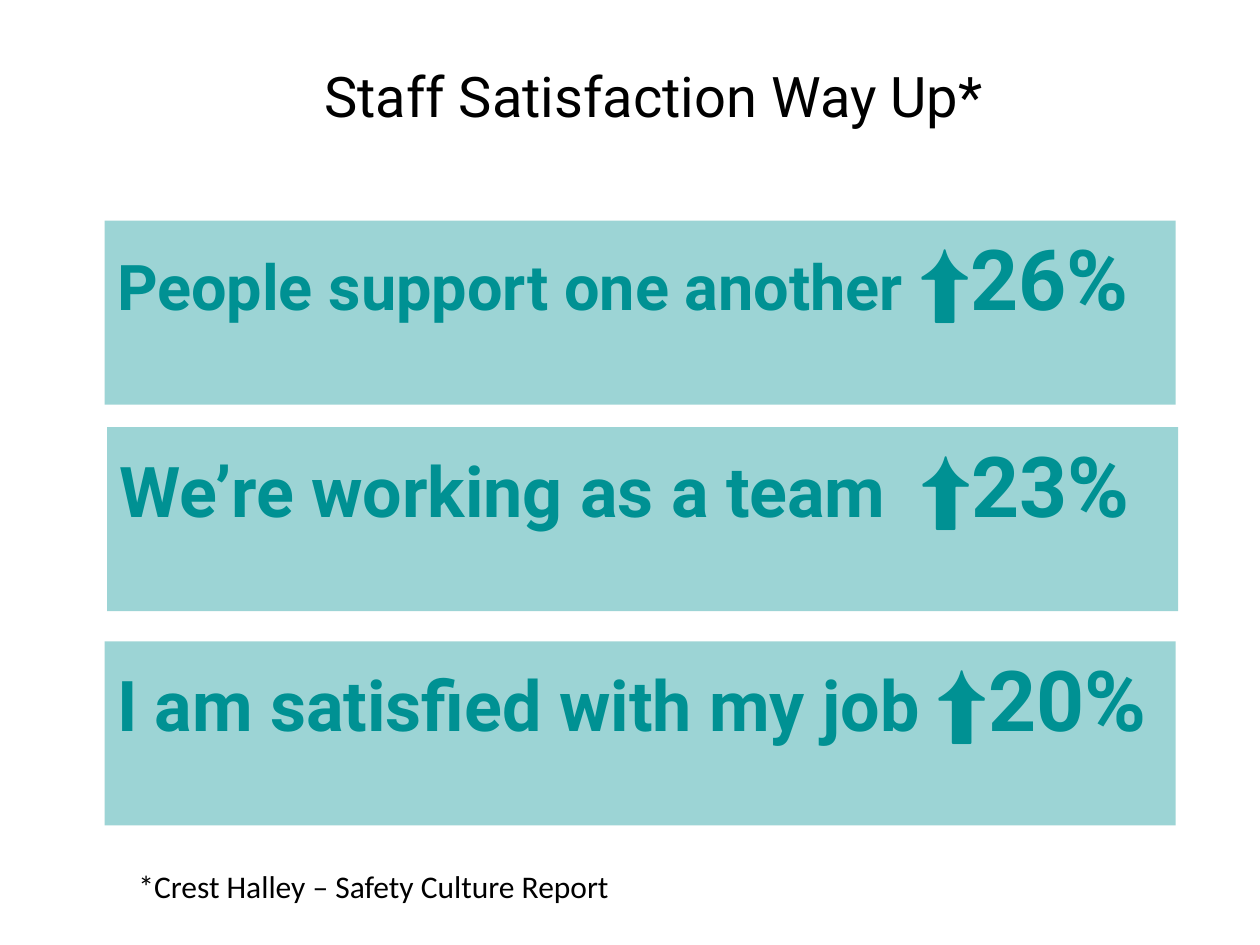
"""Build the staff satisfaction slide with three result banners."""
from dataclasses import dataclass

import lxml.etree
import pptx
import pptx.dml.color
import pptx.enum.shapes
import pptx.enum.text
import pptx.oxml.ns
import pptx.util

Cm = pptx.util.Cm
COLORS = {"teal": "009193", "text": "000000"}
BANNER_W, BANNER_H = 21.59, 3.71
BANNER_ALPHA = 39


@dataclass
class Run:
    text: str
    size: int
    color: str = "text"
    font: str = "Roboto"
    bold: bool = False


@dataclass
class Banner:
    left: float
    top: float
    statement: str
    size: int
    change: str


BANNERS = [
    Banner(2.11, 4.45, "People support one another ", 36, "⬆26%"),
    Banner(2.16, 8.61, "We’re working as a team  ", 40, "⬆23%"),
    Banner(2.11, 12.93, "I am satisfied with my job ", 40, "⬆20%"),
]


def rgb(name: str) -> pptx.dml.color.RGBColor:
    return pptx.dml.color.RGBColor.from_string(COLORS[name])


def write(sp, runs: list[Run], align=pptx.enum.text.PP_ALIGN.LEFT):
    tf = sp.text_frame
    tf.word_wrap = True
    tf.vertical_anchor = pptx.enum.text.MSO_ANCHOR.TOP
    p = tf.paragraphs[0]
    p.alignment = align
    for run in runs:
        r = p.add_run()
        r.text = run.text
        r.font.size = pptx.util.Pt(run.size)
        r.font.name = run.font
        r.font.bold = run.bold
        r.font.color.rgb = rgb(run.color)
    return p


def add_text(s, left: float, top: float, width: float, height: float):
    return s.shapes.add_textbox(Cm(left), Cm(top), Cm(width), Cm(height))


def add_banner(s, banner: Banner) -> None:
    sp = s.shapes.add_shape(
        pptx.enum.shapes.MSO_SHAPE.RECTANGLE,
        Cm(banner.left), Cm(banner.top), Cm(BANNER_W), Cm(BANNER_H))
    sp.shadow.inherit = False
    sp.line.fill.background()
    sp.fill.solid()
    sp.fill.fore_color.rgb = rgb("teal")
    qn = pptx.oxml.ns.qn
    color = sp.element.spPr.find(qn("a:solidFill")).find(qn("a:srgbClr"))
    lxml.etree.SubElement(color, qn("a:alpha"), val=str(BANNER_ALPHA * 1000))
    write(sp, [Run(banner.statement, banner.size, "teal", bold=True),
               Run(banner.change, 48, "teal", bold=True)])


def main() -> None:
    prs = pptx.Presentation()
    prs.slide_width, prs.slide_height = Cm(25.4), Cm(19.05)
    s = prs.slides.add_slide(prs.slide_layouts[6])
    title = add_text(s, 1.75, 1.27, 22.86, 3.68)
    p = write(title, [Run("Staff Satisfaction Way Up*", 32)],
              pptx.enum.text.PP_ALIGN.CENTER)
    p.line_spacing = 0.9
    for banner in BANNERS:
        add_banner(s, banner)
    source = add_text(s, 2.54, 17.35, 20.75, 1.07)
    write(source, [Run("*Crest Halley – Safety Culture Report", 18,
                       font="Calibri")])
    source.text_frame.auto_size = pptx.enum.text.MSO_AUTO_SIZE.SHAPE_TO_FIT_TEXT
    prs.save("out.pptx")


if __name__ == "__main__":
    main()
